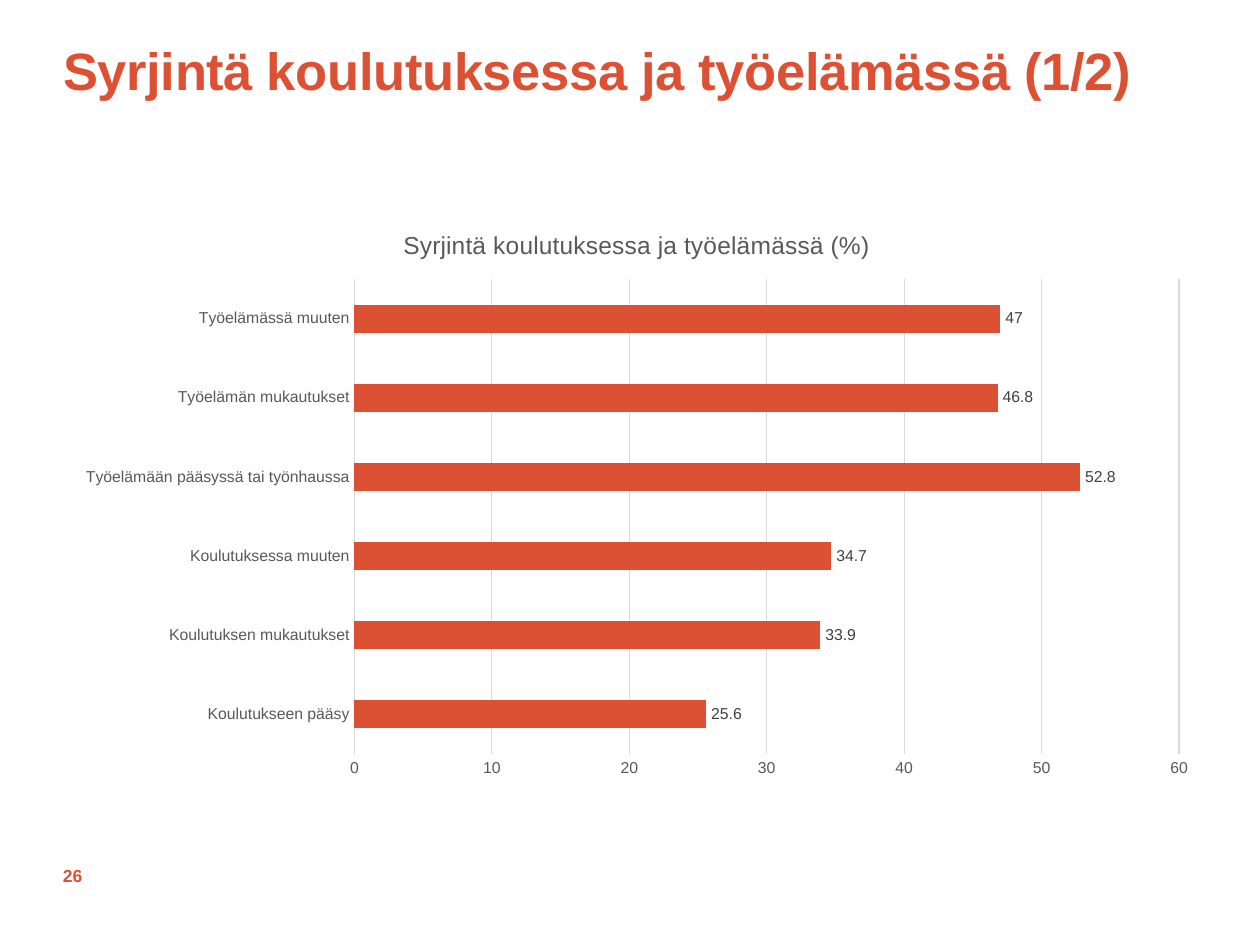
from pptx import Presentation
from pptx.chart.data import CategoryChartData
from pptx.dml.color import RGBColor
from pptx.enum.chart import XL_CHART_TYPE, XL_LABEL_POSITION, XL_TICK_MARK
from pptx.enum.text import MSO_ANCHOR, PP_ALIGN
from pptx.util import Cm, Pt

RED, GRAY, DARK, GRID = "DC5034", "595959", "404040", "D9D9D9"
ROWS = [
    ("Koulutukseen pääsy", 25.6),
    ("Koulutuksen mukautukset", 33.9),
    ("Koulutuksessa muuten", 34.7),
    ("Työelämään pääsyssä tai työnhaussa", 52.8),
    ("Työelämän mukautukset", 46.8),
    ("Työelämässä muuten", 47),
]


def color(code):
    return RGBColor.from_string(code)


def style(font, size, code, bold=False):
    font.name = "Arial"
    font.size = Pt(size)
    font.bold = bold
    font.color.rgb = color(code)


def rule(line):
    line.color.rgb = color(GRID)
    line.width = Pt(0.75)


def put_text(shape, box, text, size, anchor):
    """Place a red bold line of text in a box without margins."""
    shape.left, shape.top, shape.width, shape.height = box
    frame = shape.text_frame
    frame.margin_left = frame.margin_right = 0
    frame.margin_top = frame.margin_bottom = 0
    frame.word_wrap = True
    frame.vertical_anchor = anchor
    frame.text = text
    para = frame.paragraphs[0]
    para.alignment = PP_ALIGN.LEFT
    style(para.runs[0].font, size, RED, True)
    return para.runs[0]


def add_title(slide, box):
    run = put_text(slide.shapes.title, box,
                   "Syrjintä koulutuksessa ja työelämässä (1/2)",
                   30, MSO_ANCHOR.TOP)
    run.font._element.set("spc", "-20")


def add_number(slide, box):
    put_text(slide.shapes.add_textbox(*box), box, "26", 10, MSO_ANCHOR.MIDDLE)


def add_bars(slide, box):
    data = CategoryChartData()
    data.categories = [name for name, share in ROWS]
    data.add_series("Series 1", [share for name, share in ROWS])
    chart = slide.shapes.add_chart(XL_CHART_TYPE.BAR_CLUSTERED, *box, data).chart
    style(chart.font, 10, "000000")
    chart.has_legend = False
    chart.has_title = True
    head = chart.chart_title.text_frame
    head.text = "Syrjintä koulutuksessa ja työelämässä (%)"
    style(head.paragraphs[0].runs[0].font, 14, GRAY)

    for axis in (chart.category_axis, chart.value_axis):
        axis.major_tick_mark = axis.minor_tick_mark = XL_TICK_MARK.NONE
        style(axis.tick_labels.font, 9, GRAY)
    rule(chart.category_axis.format.line)
    values = chart.value_axis
    values.minimum_scale, values.maximum_scale, values.major_unit = 0, 60, 10
    values.format.line.fill.background()
    rule(values.major_gridlines.format.line)

    plot = chart.plots[0]
    plot.gap_width = 182
    plot.vary_by_categories = False
    fill = plot.series[0].format.fill
    fill.solid()
    fill.fore_color.rgb = color(RED)
    plot.has_data_labels = True
    labels = plot.data_labels
    labels.show_value = True
    labels.position = XL_LABEL_POSITION.OUTSIDE_END
    style(labels.font, 9, DARK)


def main():
    deck = Presentation()
    deck.slide_width, deck.slide_height = Cm(25.4), Cm(19.05)
    slide = deck.slides.add_slide(deck.slide_layouts[5])
    left = Cm(1.27)
    add_title(slide, (left, Cm(0.76), Cm(22.86), Cm(2.95)))
    add_number(slide, (left, Cm(17.15), Cm(1.8), Cm(1.02)))
    add_bars(slide, (left, Cm(4.17), Cm(23.14), Cm(11.73)))
    deck.save("out.pptx")


if __name__ == "__main__":
    main()
